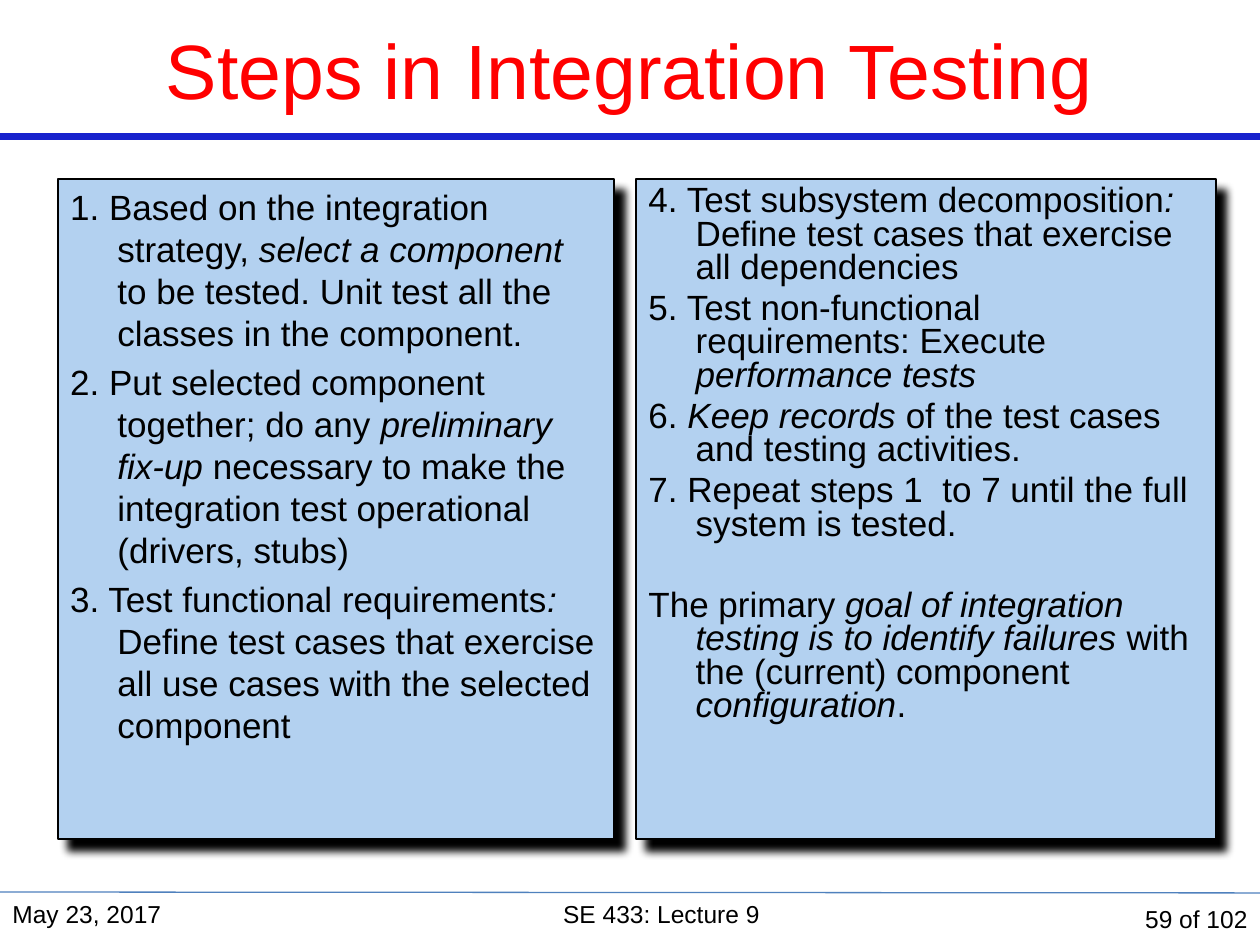
import pptx
import pptx.util
import pptx.dml.color
import pptx.enum.shapes
import pptx.enum.text
import pptx.oxml
import pptx.oxml.ns
import lxml.etree

Pt = pptx.util.Pt
ALIGN = pptx.enum.text.PP_ALIGN
ANCHOR = pptx.enum.text.MSO_ANCHOR
NS = pptx.oxml.ns.nsdecls("a")


def color(code):
    return pptx.dml.color.RGBColor.from_string(code)


def style(run, size, code="000000"):
    run.font.name = "Arial"
    run.font.size = Pt(size)
    run.font.color.rgb = color(code)


deck = pptx.Presentation()
deck.slide_width, deck.slide_height = Pt(720), Pt(540)
slide = deck.slides.add_slide(deck.slide_layouts[5])
shapes = slide.shapes

# Rules under the title and above the footer
for top, end, code, width in [(78, 78, "1822CD", 4.5), (509.75, 510.25, "4F81BD", 0.75)]:
    rule = shapes.add_connector(
        pptx.enum.shapes.MSO_CONNECTOR.STRAIGHT, Pt(0), Pt(top), Pt(720), Pt(end))
    rule.line.color.rgb = color(code)
    rule.line.width = Pt(width)
    lxml.etree.SubElement(rule._element.spPr, pptx.oxml.ns.qn("a:effectLst"))

# Title
title = shapes.title
title.left, title.top, title.width, title.height = Pt(0), Pt(0), Pt(720), Pt(78)
title.text_frame.text = "Steps in Integration Testing"
title.text_frame.vertical_anchor = ANCHOR.MIDDLE
para = title.text_frame.paragraphs[0]
para.alignment = ALIGN.CENTER
style(para.runs[0], 44, "FF0000")

# Step panels: asterisks enclose italic words
first = [
    "1. Based on the integration strategy, *select a component *to be tested. "
    "Unit test all the classes in the component.",
    "2. Put selected component together; do any* preliminary fix-up *necessary "
    "to make the integration test operational (drivers, stubs)",
    "3. Test functional requirements*: *Define test cases that exercise "
    "all use cases with the selected component",
]
second = [
    "4. Test subsystem decomposition*: *Define test cases that exercise all dependencies",
    "5. Test non-functional requirements: Execute *performance tests*",
    "6. *Keep records *of the test cases and testing activities.",
    "7. Repeat steps 1  to 7 until the full system is tested.",
    "The primary* goal of integration testing is to identify failures *with "
    "the (current) component *configuration*.",
]
for left, width, space, steps in [(33, 317.75, None, first), (363.5, 331.25, 0.8, second)]:
    panel = shapes.add_shape(
        pptx.enum.shapes.MSO_SHAPE.RECTANGLE, Pt(left), Pt(102.5), Pt(width), Pt(377))
    panel.fill.solid()
    panel.fill.fore_color.rgb = color("B3D1F0")
    panel.line.color.rgb = color("000000")
    panel.line.width = Pt(1)
    panel.shadow.inherit = False
    shade = pptx.oxml.parse_xml(
        f'<a:outerShdw {NS} blurRad="{Pt(5)}" dist="{Pt(8.5)}" dir="2700000" '
        'algn="tl" rotWithShape="0"><a:srgbClr val="000000"/></a:outerShdw>')
    panel._element.spPr.find(pptx.oxml.ns.qn("a:effectLst")).append(shade)
    frame = panel.text_frame
    frame.word_wrap = True
    frame.vertical_anchor = ANCHOR.TOP
    frame.text = "\n".join(steps)
    for para, step in zip(frame.paragraphs, steps):
        para.text = ""
        para.alignment = ALIGN.LEFT
        para.line_spacing = space
        # The closing remark stands one line apart from the steps
        para.space_before = Pt(27 if step.startswith("The") else 4)
        props = para._p.get_or_add_pPr()
        props.set("marL", str(Pt(27)))
        props.set("indent", str(-Pt(27)))
        for spot, part in enumerate(step.split("*")):
            if part:
                run = para.add_run()
                run.text = part
                style(run, 20)
                run.font.italic = spot % 2 == 1

# Footer
for left, width, text, align, anchor in [
    (0, 156, "May 23, 2017", ALIGN.LEFT, ANCHOR.TOP),
    (156, 444, "SE 433: Lecture 9", ALIGN.CENTER, ANCHOR.TOP),
    (600, 120, "59 of 102", ALIGN.RIGHT, ANCHOR.MIDDLE),
]:
    frame = shapes.add_textbox(Pt(left), Pt(510), Pt(width), Pt(30)).text_frame
    frame.word_wrap = True
    frame.vertical_anchor = anchor
    frame.text = text
    frame.paragraphs[0].alignment = align
    style(frame.paragraphs[0].runs[0], 14)

deck.save("out.pptx")
